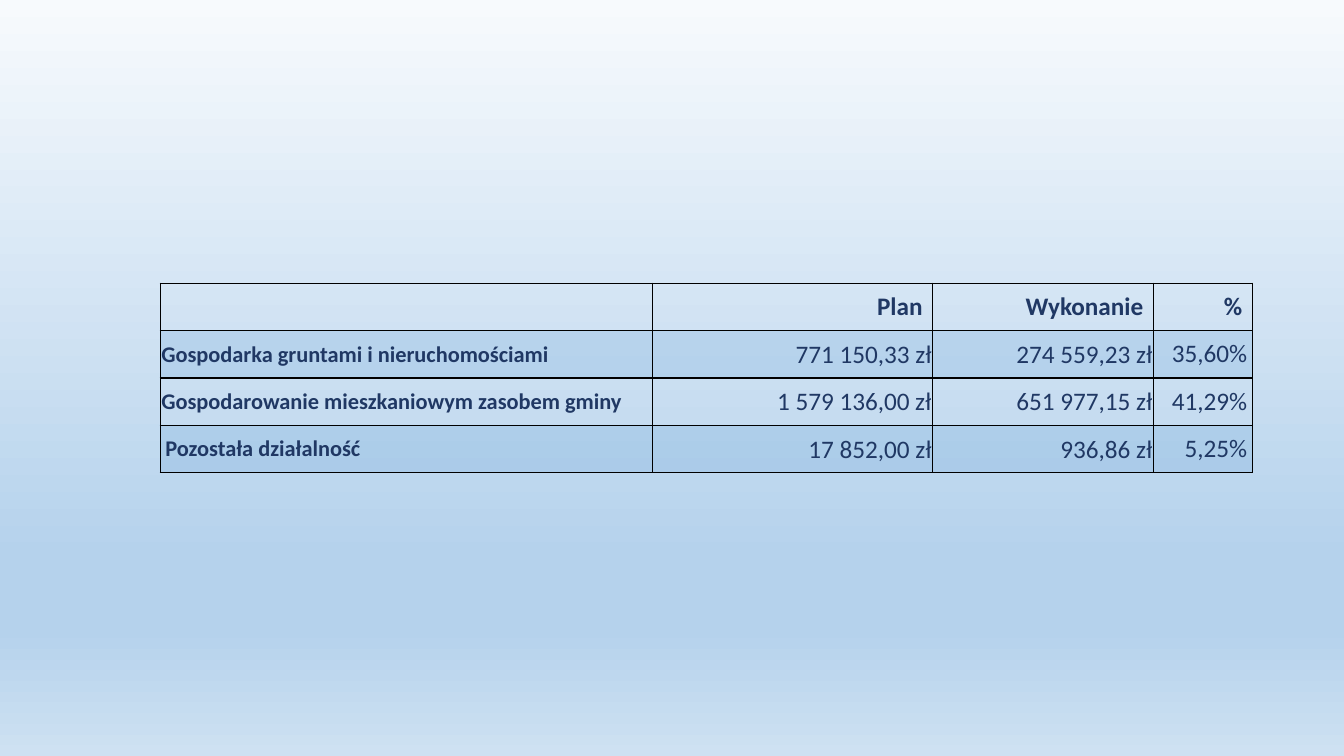
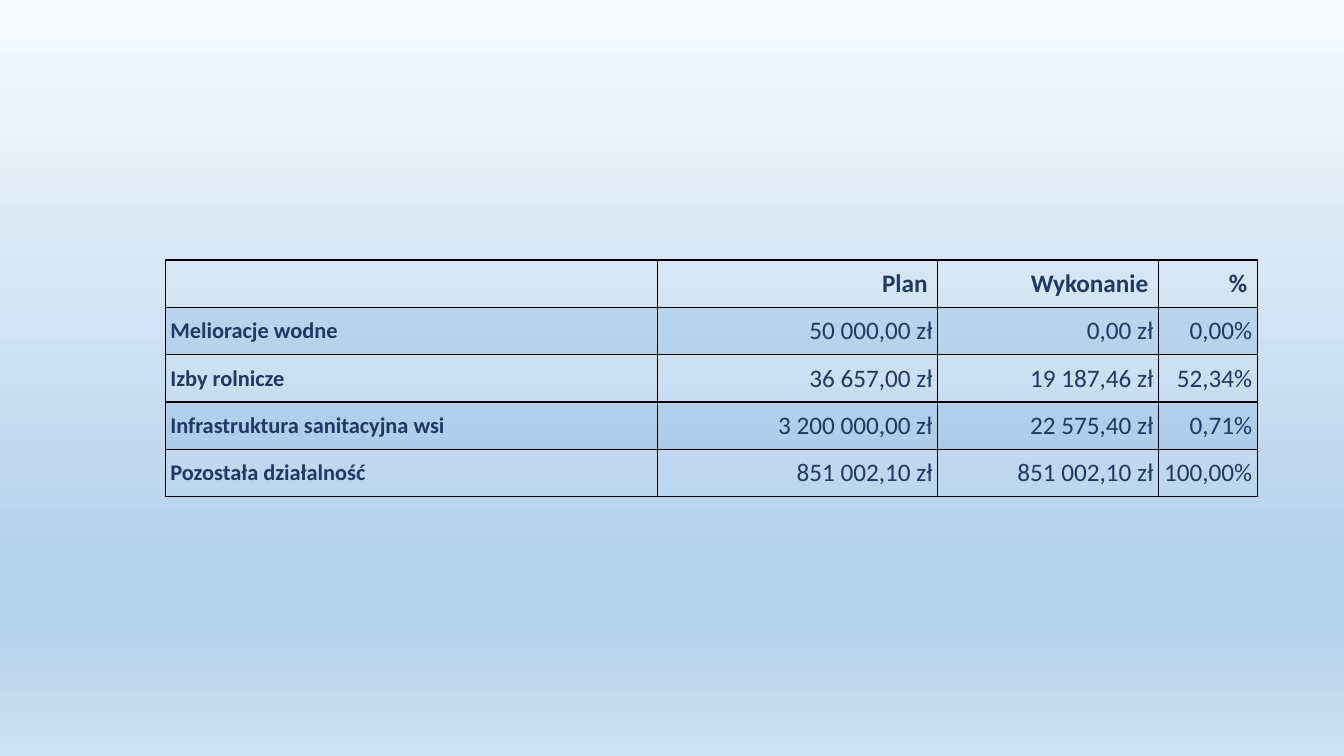
from itertools import product

from lxml.etree import SubElement
from pptx import Presentation
from pptx.dml.color import RGBColor
from pptx.enum.text import MSO_ANCHOR, PP_ALIGN
from pptx.oxml.ns import qn
from pptx.util import Inches, Pt

NAVY = RGBColor(0x20, 0x38, 0x64)
BAND_BLUE = RGBColor(0x5B, 0x9B, 0xD5)
BLACK = RGBColor(0x00, 0x00, 0x00)
BACKGROUND_STOPS = (
    (0, RGBColor(0xF7, 0xFA, 0xFD)),
    (74, RGBColor(0xB5, 0xD2, 0xEC)),
    (83, RGBColor(0xB5, 0xD2, 0xEC)),
    (100, RGBColor(0xCE, 0xE1, 0xF2)),
)
FONT = "Calibri"
BAND_OPACITY = 20
COLUMN_WIDTHS = (4.88, 2.78, 2.19, 0.98)
ROW_HEIGHT = 0.47
HEADER = ("", "Plan", "Wykonanie", "%")
HEADER_INSETS = (0.1, 0.05, 0.1, 0.05)
BODY_INSETS = (0.05, 0.05, 0.05, 0.05)
TIGHT_INSETS = (0.01, 0.01, 0.01, 0)

PROPERTY_ROWS = (
    ("Gospodarka gruntami i nieruchomościami", "771 150,33 zł", "274 559,23 zł", "35,60%"),
    ("Gospodarowanie mieszkaniowym zasobem gminy", "1 579 136,00 zł", "651 977,15 zł", "41,29%"),
    ("Pozostała działalność", "17 852,00 zł", "936,86 zł", "5,25%"),
)
PROPERTY_TIGHT_CELLS = set(product((1, 2, 3), (0, 1, 2))) - {(3, 0)}
FARMING_ROWS = (
    ("Melioracje wodne", "50 000,00 zł", "0,00 zł", "0,00%"),
    ("Izby rolnicze", "36 657,00 zł", "19 187,46 zł", "52,34%"),
    ("Infrastruktura sanitacyjna wsi", "3 200 000,00 zł", "22 575,40 zł", "0,71%"),
    ("Pozostała działalność", "851 002,10 zł", "851 002,10 zł", "100,00%"),
)


def set_background(master):
    """Give every slide the vertical blue gradient."""
    fill = master.background.fill
    fill.gradient()
    fill.gradient_angle = 270
    stop_list = next(master.element.iter(qn("a:gsLst")))
    for stop in list(stop_list):
        stop_list.remove(stop)
    for position, color in BACKGROUND_STOPS:
        stop = SubElement(stop_list, qn("a:gs"), pos=str(position * 1000))
        SubElement(stop, qn("a:srgbClr"), val=str(color))


def add_borders(cell):
    """Draw a one-point black line on each side of a cell."""
    properties = cell._tc.get_or_add_tcPr()
    for side in ("a:lnL", "a:lnR", "a:lnT", "a:lnB"):
        line = SubElement(properties, qn(side), w=str(Pt(1)))
        solid = SubElement(line, qn("a:solidFill"))
        SubElement(solid, qn("a:srgbClr"), val=str(BLACK))


def fill_cell(cell, banded):
    """Tint a banded cell and leave any other cell clear."""
    if not banded:
        cell.fill.background()
        return
    cell.fill.solid()
    cell.fill.fore_color.rgb = BAND_BLUE
    color = next(cell._tc.tcPr.find(qn("a:solidFill")).iter(qn("a:srgbClr")))
    SubElement(color, qn("a:alpha"), val=str(BAND_OPACITY * 1000))


def write_cell(cell, text, insets, size, bold, alignment):
    """Write one line of formatted text in a cell."""
    cell.text = text
    cell.vertical_anchor = MSO_ANCHOR.MIDDLE
    cell.margin_left, cell.margin_top, cell.margin_right, cell.margin_bottom = map(Inches, insets)
    paragraph = cell.text_frame.paragraphs[0]
    paragraph.alignment = alignment
    paragraph.font.name = FONT
    paragraph.font.size = Pt(size)
    paragraph.font.bold = bold
    paragraph.font.color.rgb = NAVY


def add_budget_table(slide, left, top, body_rows, tight_cells=()):
    """Place a budget table with its top left corner at the given point."""
    rows = (HEADER, *body_rows)
    table = slide.shapes.add_table(
        len(rows), len(HEADER), Inches(left), Inches(top),
        Inches(sum(COLUMN_WIDTHS)), Inches(ROW_HEIGHT * len(rows)),
    ).table
    table.first_row = False
    table.horz_banding = False
    for column, width in zip(table.columns, COLUMN_WIDTHS):
        column.width = Inches(width)
    for row_index, row in enumerate(rows):
        table.rows[row_index].height = Inches(ROW_HEIGHT)
        is_header = row_index == 0
        for column_index, text in enumerate(row):
            cell = table.cell(row_index, column_index)
            is_label = column_index == 0
            if is_header:
                insets = HEADER_INSETS
            elif (row_index, column_index) in tight_cells:
                insets = TIGHT_INSETS
            else:
                insets = BODY_INSETS
            add_borders(cell)
            fill_cell(cell, row_index % 2 == 1)
            write_cell(
                cell, text, insets,
                size=16 if is_label else 18,
                bold=is_header or is_label,
                alignment=PP_ALIGN.LEFT if is_label else PP_ALIGN.RIGHT,
            )


def main():
    """Build and save the presentation."""
    presentation = Presentation()
    presentation.slide_width = Inches(13.33)
    presentation.slide_height = Inches(7.5)
    set_background(presentation.slide_master)
    blank_layout = presentation.slide_layouts[6]
    property_slide = presentation.slides.add_slide(blank_layout)
    add_budget_table(property_slide, 1.59, 2.81, PROPERTY_ROWS, PROPERTY_TIGHT_CELLS)
    farming_slide = presentation.slides.add_slide(blank_layout)
    add_budget_table(farming_slide, 1.64, 2.58, FARMING_ROWS)
    presentation.save("out.pptx")


if __name__ == "__main__":
    main()
